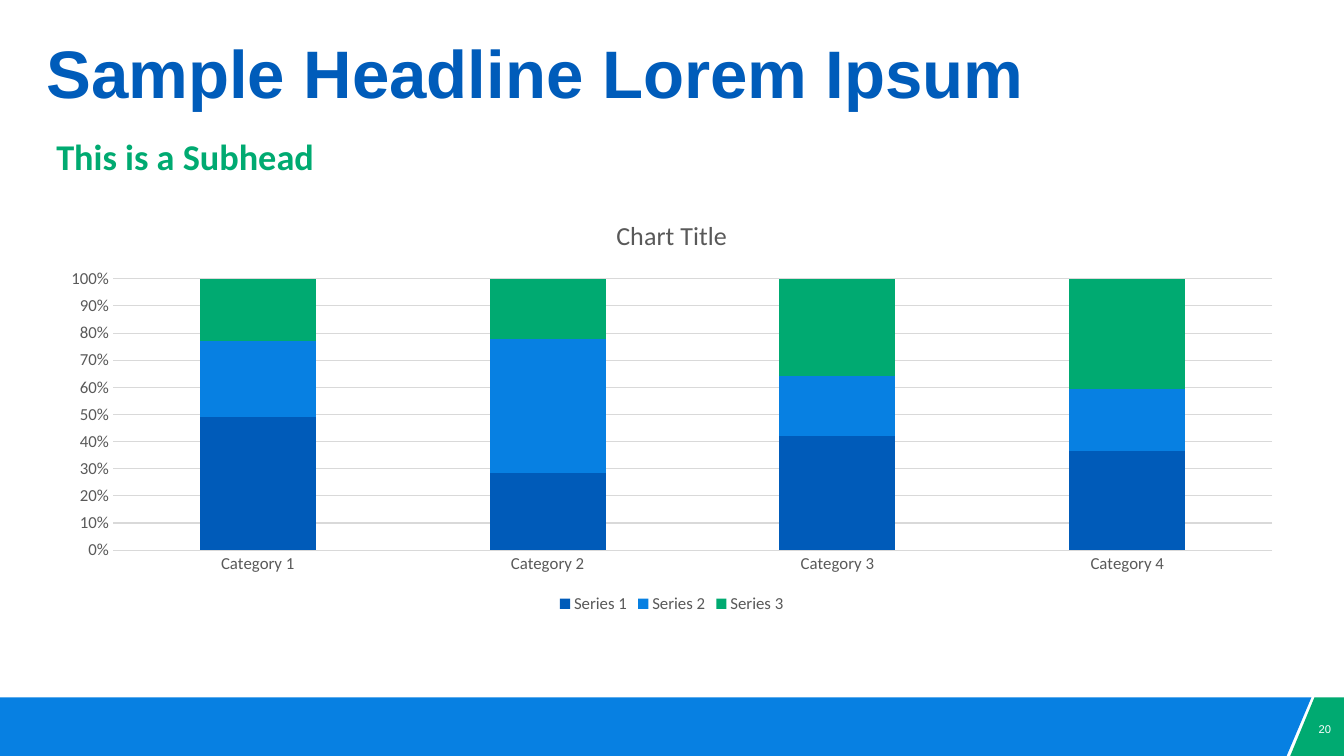
from pptx import Presentation
from pptx.chart.data import CategoryChartData as ChartData
from pptx.dml.color import RGBColor as RGB
from pptx.enum.chart import XL_CHART_TYPE as Kind, XL_LEGEND_POSITION as Legend
from pptx.enum.chart import XL_TICK_MARK as Tick
from pptx.enum.text import MSO_ANCHOR as Anchor, PP_ALIGN as Align
from pptx.util import Pt

# Content
HEAD = "Sample Headline Lorem Ipsum"
SUB = "This is a Subhead"
PAGE = "20"
TITLE = "Chart Title"
CATS = ["Category 1", "Category 2", "Category 3", "Category 4"]
SERIES = [
    ("Series 1", (49, 28, 42, 37), "navy"),
    ("Series 2", (28, 49, 22, 23), "blue"),
    ("Series 3", (23, 22, 36, 41), "green"),
]

# Theme: colours and type styles
THEME = {
    "color": {
        "navy": RGB.from_string("005BB9"),
        "blue": RGB.from_string("0780E2"),
        "green": RGB.from_string("00AA71"),
        "head": RGB.from_string("005CBA"),
        "white": RGB.from_string("FFFFFF"),
        "gray": RGB.from_string("595959"),
        "grid": RGB.from_string("D9D9D9"),
    },
    "type": {
        "head": {"name": "Arial", "size": Pt(48), "bold": True},
        "sub": {"name": "Calibri", "size": Pt(25.9), "bold": True},
        "page": {"name": "Arial", "size": Pt(8), "bold": False},
        "title": {"name": "Calibri", "size": Pt(18.6), "bold": False},
        "chart": {"name": "Calibri", "size": Pt(12), "bold": False},
    },
}
COLOR = THEME["color"]

# Layout in points
WIDE, HIGH = 960, 540
LEFT, SPAN = 33.1, 893.5
BAND = 498.2


def style(font, kind, color):
    for key, val in THEME["type"][kind].items():
        setattr(font, key, val)
    font.color.rgb = COLOR[color]


def label(slide, box, text, kind, color, pad, frame, para):
    area = slide.shapes.add_textbox(*map(Pt, box)).text_frame
    pads = dict(zip(("margin_left", "margin_top", "margin_right",
                     "margin_bottom"), map(Pt, pad)))
    line = area.paragraphs[0]
    run = line.add_run()
    run.text = text
    for item, form in ((area, {"word_wrap": True, **pads, **frame}),
                       (line, para)):
        for key, val in form.items():
            setattr(item, key, val)
    style(run.font, kind, color)


def panel(slide, dots, color):
    first, *rest = [(Pt(x), Pt(y)) for x, y in dots]
    pen = slide.shapes.build_freeform(*first)
    pen.add_line_segments(rest, close=True)
    shape = pen.convert_to_shape()
    shape.shadow.inherit = False
    shape.fill.solid()
    shape.fill.fore_color.rgb = COLOR[color]
    shape.line.fill.background()


def graph(slide, box):
    data = ChartData()
    data.categories = CATS
    for name, vals, _ in SERIES:
        data.add_series(name, vals)
    chart = slide.shapes.add_chart(
        Kind.COLUMN_STACKED_100, *map(Pt, box), data).chart
    style(chart.font, "chart", "gray")

    # Title and legend
    chart.has_title = True
    run = chart.chart_title.text_frame.paragraphs[0].add_run()
    run.text = TITLE
    style(run.font, "title", "gray")
    chart.chart_title.include_in_layout = False
    chart.has_legend = True
    chart.legend.position = Legend.BOTTOM
    chart.legend.include_in_layout = False
    style(chart.legend.font, "chart", "gray")

    # Axes
    for axis in (chart.category_axis, chart.value_axis):
        axis.major_tick_mark = axis.minor_tick_mark = Tick.NONE
        axis.format.line.fill.background()
        style(axis.tick_labels.font, "chart", "gray")
    scale = chart.value_axis
    scale.tick_labels.number_format = "0%"
    scale.tick_labels.number_format_is_linked = False
    scale.has_major_gridlines = True
    rule = scale.major_gridlines.format.line
    rule.color.rgb = COLOR["grid"]
    rule.width = Pt(0.75)

    # Columns
    plot = chart.plots[0]
    plot.gap_width, plot.overlap = 150, 100
    plot.vary_by_categories = False
    for bar, (_, _, color) in zip(plot.series, SERIES):
        bar.format.fill.solid()
        bar.format.fill.fore_color.rgb = COLOR[color]


def main():
    deck = Presentation()
    deck.slide_width, deck.slide_height = Pt(WIDE), Pt(HIGH)
    slide = deck.slides.add_slide(deck.slide_layouts[6])

    # Footer band with slanted corner
    panel(slide, [(0, BAND), (936.7, BAND), (919, HIGH), (0, HIGH)], "blue")
    panel(slide, [(WIDE, BAND), (938.9, BAND), (921.6, HIGH), (WIDE, HIGH)],
          "green")

    # Headline, page number, subhead
    flat = (0, 0, 0, 0)
    low = {"vertical_anchor": Anchor.BOTTOM}
    label(slide, (LEFT, 28.1, SPAN, 52.6), HEAD, "head", "head", flat,
          low, {"line_spacing": 0.9})
    label(slide, (933.8, 506.2, 25.2, 28.8), PAGE, "page", "white", flat,
          {"vertical_anchor": Anchor.MIDDLE}, {"alignment": Align.CENTER})
    label(slide, (LEFT, 98.6, SPAN, 31), SUB, "sub", "green",
          (7.2, 3.6, 7.2, 3.6), low, {"line_spacing": 0.7})

    # Chart
    graph(slide, (LEFT, 141.8, SPAN, 299.5))
    deck.save("out.pptx")


if __name__ == "__main__":
    main()
